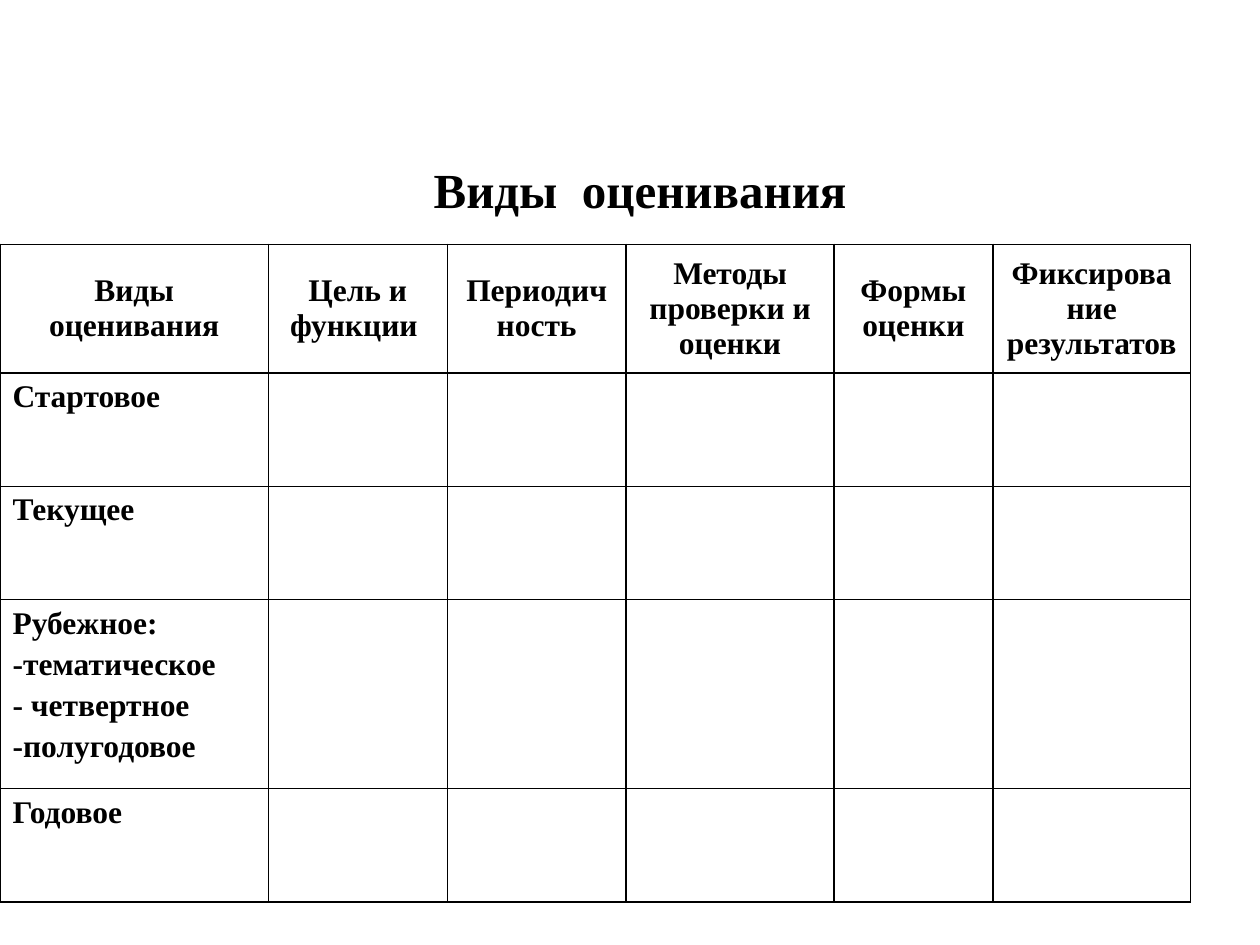
from dataclasses import dataclass

from lxml import etree
from pptx import Presentation
from pptx.dml.color import RGBColor
from pptx.enum import text as t
from pptx.oxml import ns
from pptx.util import Pt

BLACK = RGBColor(0, 0, 0)
WHITE = RGBColor(255, 255, 255)
FONT = "Times New Roman"
SIZE = 18
GAP = 0.2 * SIZE  # space between paragraphs


@dataclass
class Col:
    head: str
    width: float


@dataclass
class Row:
    lines: list[str]
    height: float


COLS = [
    Col("Виды оценивания", 153.36),
    Col("Цель и функции ", 102.24),
    Col("Периодичность", 102.24),
    Col("Методы проверки и оценки", 118.8),
    Col("Формы оценки", 90.72),
    Col("Фиксирование результатов", 113.04),
]
HEAD = 73.44
ROWS = [
    Row(["Стартовое"], 64.8),
    Row(["Текущее"], 64.8),
    Row(["Рубежное:", "-тематическое", "- четвертное", "-полугодовое"], 108),
    Row(["Годовое"], 64.8),
]


def write(frame, lines: list[str], size: float, align) -> None:
    """Fill a text frame, one paragraph a line."""
    for i, line in enumerate(lines):
        par = frame.add_paragraph() if i else frame.paragraphs[0]
        par.alignment = align
        if i:
            par.space_before = Pt(GAP)
        run = par.add_run()
        run.text = line
        font = run.font
        font.name, font.size, font.bold = FONT, Pt(size), True
        font.color.rgb = BLACK


def style(cell) -> None:
    """Give a cell a white fill and thin black borders."""
    cell.fill.solid()
    cell.fill.fore_color.rgb = WHITE
    props = cell._tc.get_or_add_tcPr()
    for i, side in enumerate(("lnL", "lnR", "lnT", "lnB")):
        line = etree.Element(ns.qn(f"a:{side}"), w=str(Pt(1)))
        fill = etree.SubElement(line, ns.qn("a:solidFill"))
        etree.SubElement(fill, ns.qn("a:srgbClr"), val=str(BLACK))
        props.insert(i, line)


def draw_title(slide) -> None:
    box = slide.shapes.add_textbox(Pt(41.76), Pt(0), Pt(648), Pt(216))
    frame = box.text_frame
    frame.word_wrap = True
    frame.vertical_anchor = t.MSO_ANCHOR.MIDDLE
    write(frame, ["Виды  оценивания"], 28, t.PP_ALIGN.CENTER)


def draw_table(slide) -> None:
    wide = sum(col.width for col in COLS)
    high = HEAD + sum(row.height for row in ROWS)
    grid = slide.shapes.add_table(
        len(ROWS) + 1, len(COLS), Pt(0), Pt(139.68), Pt(wide), Pt(high)
    ).table
    grid.first_row = grid.horz_banding = False
    for cell in grid.iter_cells():
        style(cell)

    # Header row
    grid.rows[0].height = Pt(HEAD)
    for i, col in enumerate(COLS):
        grid.columns[i].width = Pt(col.width)
        cell = grid.cell(0, i)
        cell.vertical_anchor = t.MSO_ANCHOR.MIDDLE
        write(cell.text_frame, [col.head], SIZE, t.PP_ALIGN.CENTER)

    # Kinds of assessment
    for i, row in enumerate(ROWS, 1):
        grid.rows[i].height = Pt(row.height)
        write(grid.cell(i, 0).text_frame, row.lines, SIZE, t.PP_ALIGN.LEFT)


def main() -> None:
    deck = Presentation()
    deck.slide_width, deck.slide_height = Pt(720), Pt(540)
    slide = deck.slides.add_slide(deck.slide_layouts[6])
    draw_title(slide)
    draw_table(slide)
    deck.save("out.pptx")


if __name__ == "__main__":
    main()
